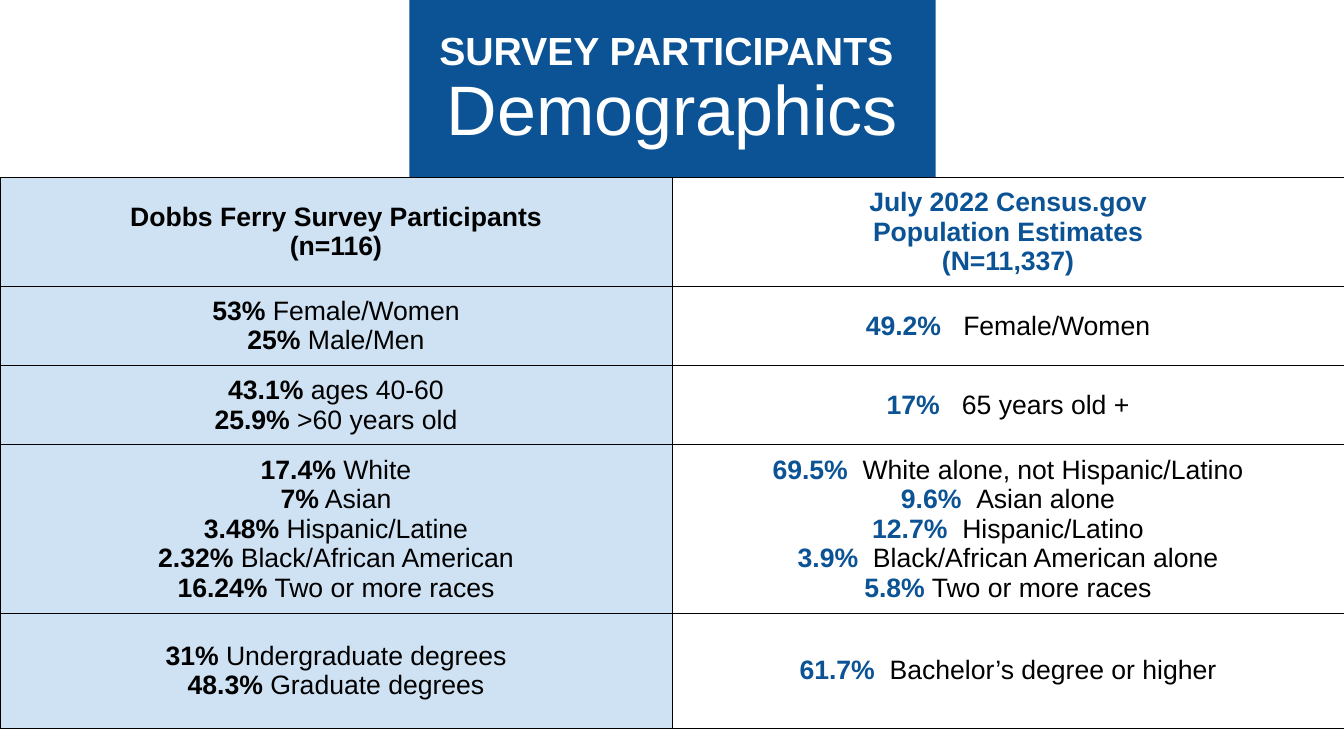
from lxml.etree import SubElement
from pptx import Presentation
from pptx.dml.color import RGBColor
from pptx.enum.text import MSO_ANCHOR, MSO_AUTO_SIZE, PP_ALIGN
from pptx.oxml.ns import qn
from pptx.util import Inches, Pt

BLUE = RGBColor(0x0B, 0x53, 0x94)
PALE_BLUE = RGBColor(0xCF, 0xE2, 0xF3)
WHITE = RGBColor(0xFF, 0xFF, 0xFF)
BLACK = RGBColor(0x00, 0x00, 0x00)

ROW_HEIGHTS = [1.08, 0.78, 0.78, 1.67, 1.14]
HEADINGS = [
    ["Dobbs Ferry Survey Participants", "(n=116)"],
    ["July 2022 Census.gov", "Population Estimates", "(N=11,337)"],
]
# Each line is share, label and the width of the gap between them in spaces.
FIGURES = [
    ([("53%", "Female/Women", 1), ("25%", "Male/Men", 1)],
     [("49.2%", "Female/Women", 3)]),
    ([("43.1%", "ages 40-60", 1), ("25.9%", ">60 years old", 1)],
     [("17%", "65 years old +", 3)]),
    ([("17.4%", "White", 1), ("7%", "Asian", 1), ("3.48%", "Hispanic/Latine", 1),
      ("2.32%", "Black/African American", 1), ("16.24%", "Two or more races", 1)],
     [("69.5%", "White alone, not Hispanic/Latino", 2), ("9.6%", "Asian alone", 2),
      ("12.7%", "Hispanic/Latino", 2), ("3.9%", "Black/African American alone", 2),
      ("5.8%", "Two or more races", 1)]),
    ([("31%", "Undergraduate degrees", 1), ("48.3%", "Graduate degrees", 1)],
     [("61.7%", "Bachelor’s degree or higher", 2)]),
]


class SlideBuilder:
    font = "Arial"
    table_size = 19
    fills = [PALE_BLUE, WHITE]
    accents = [BLACK, BLUE]

    def __init__(self, deck):
        self.page = deck.slides.add_slide(deck.slide_layouts[5])

    def add_span(self, para, text, size, color, bold=False):
        span = para.add_run()
        span.text = text
        span.font.name = self.font
        span.font.size = Pt(size)
        span.font.bold = bold
        span.font.color.rgb = color
        return span

    def add_gap(self, para, spaces):
        """Add one space, widened by letter spacing to the given number."""
        span = self.add_span(para, " ", self.table_size, BLACK)
        if spaces > 1:
            extra = (spaces - 1) * self.table_size * 0.278
            span.font._element.set("spc", str(round(extra * 100)))

    def add_title(self, left, top, width, height):
        box = self.page.shapes.title
        box.left, box.top = Inches(left), Inches(top)
        box.width, box.height = Inches(width), Inches(height)
        box.fill.solid()
        box.fill.fore_color.rgb = BLUE
        frame = box.text_frame
        frame.word_wrap = True
        frame.auto_size = MSO_AUTO_SIZE.NONE
        frame.vertical_anchor = MSO_ANCHOR.MIDDLE
        frame.margin_left = frame.margin_right = Inches(0.13)
        frame.margin_top = frame.margin_bottom = Inches(0.13)
        para = frame.paragraphs[0]
        para.alignment = PP_ALIGN.CENTER
        para.line_spacing = 0.9
        self.add_span(para, "SURVEY PARTICIPANTS", 28, WHITE, bold=True)
        self.add_span(para, " ", 32, WHITE)
        para.add_line_break()
        line_break = para._p.findall(qn("a:br"))[-1]
        SubElement(line_break, qn("a:rPr"), sz="3200")
        self.add_span(para, "Demographics", 50, WHITE)

    def format_cell(self, cell, fill):
        cell.margin_left = cell.margin_right = Inches(0.1)
        cell.margin_top = cell.margin_bottom = Inches(0.1)
        cell.vertical_anchor = MSO_ANCHOR.MIDDLE
        properties = cell._tc.get_or_add_tcPr()
        for side in ("a:lnL", "a:lnR", "a:lnT", "a:lnB"):
            border = SubElement(properties, qn(side), w=str(Pt(0.75)))
            paint = SubElement(border, qn("a:solidFill"))
            SubElement(paint, qn("a:srgbClr"), val=str(BLACK))
        cell.fill.solid()
        cell.fill.fore_color.rgb = fill

    def fill_cell(self, cell, lines, accent):
        """Write headings (plain strings) or figures (share, label, gap)."""
        frame = cell.text_frame
        for index, line in enumerate(lines):
            para = frame.add_paragraph() if index else frame.paragraphs[0]
            para.alignment = PP_ALIGN.CENTER
            if isinstance(line, str):
                self.add_span(para, line, self.table_size, accent, bold=True)
                continue
            share, label, spaces = line
            self.add_span(para, share, self.table_size, accent, bold=True)
            self.add_gap(para, spaces)
            self.add_span(para, label, self.table_size, BLACK)

    def add_table(self, rows, left, top, width):
        table = self.page.shapes.add_table(
            len(rows), 2, Inches(left), Inches(top),
            Inches(width), Inches(sum(ROW_HEIGHTS))).table
        table.first_row = False
        table.horz_banding = False
        for row, height in zip(table.rows, ROW_HEIGHTS):
            row.height = Inches(height)
        for row, row_lines in zip(table.rows, rows):
            for cell, lines, fill, accent in zip(
                    row.cells, row_lines, self.fills, self.accents):
                self.format_cell(cell, fill)
                self.fill_cell(cell, lines, accent)


def main():
    deck = Presentation()
    deck.slide_width, deck.slide_height = Inches(13.33), Inches(7.5)
    builder = SlideBuilder(deck)
    builder.add_title(4.06, 0, 5.22, 1.76)
    builder.add_table([HEADINGS, *FIGURES], 0, 1.76, 13.33)
    deck.save("out.pptx")


if __name__ == "__main__":
    main()
